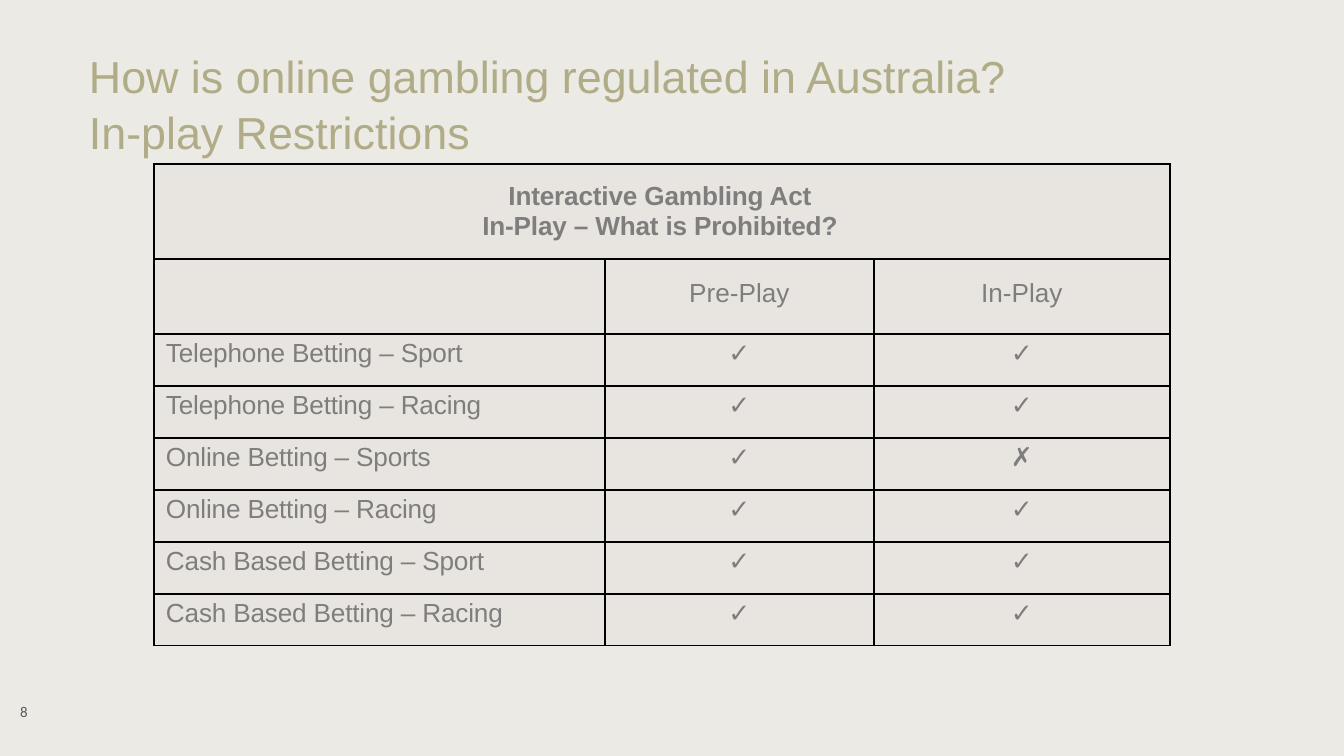
from lxml.etree import SubElement
from pptx import Presentation
from pptx.dml.color import RGBColor
from pptx.enum.text import MSO_ANCHOR, PP_ALIGN
from pptx.oxml.ns import qn
from pptx.util import Emu, Pt

EMU_PER_PX = 914400 / 134.4

BACKGROUND = RGBColor(0xEC, 0xEA, 0xE4)
CELL_FILL = RGBColor(0xE8, 0xE4, 0xDF)
TITLE_COLOR = RGBColor(0xB1, 0xAC, 0x88)
TABLE_TEXT = RGBColor(0x7E, 0x7E, 0x7E)
NUMBER_COLOR = RGBColor(0x59, 0x59, 0x59)
BORDER_COLOR = RGBColor(0x00, 0x00, 0x00)

TITLE_LINES = ["How is online gambling regulated in Australia?", "In-play Restrictions"]
HEADING_LINES = ["Interactive Gambling Act", "In-Play – What is Prohibited?"]
COLUMN_LABELS = ["", "Pre-Play", "In-Play"]
BETTING_ROWS = [
    ["Telephone Betting – Sport", "✓", "✓"],
    ["Telephone Betting – Racing", "✓", "✓"],
    ["Online Betting – Sports", "✓", "✗"],
    ["Online Betting – Racing", "✓", "✓"],
    ["Cash Based Betting – Sport", "✓", "✓"],
    ["Cash Based Betting – Racing", "✓", "✓"],
]
COLUMN_WIDTHS = [451, 269, 296]
ROW_HEIGHTS = [95, 75] + [52] * len(BETTING_ROWS)


def px(value):
    return Emu(round(value * EMU_PER_PX))


def set_margins(target, left=0, top=0, right=0, bottom=0):
    target.margin_left, target.margin_top = px(left), px(top)
    target.margin_right, target.margin_bottom = px(right), px(bottom)


def write_lines(text_frame, lines, size, color, font_name="Arial", bold=False,
                align=PP_ALIGN.LEFT, line_spacing=1.0, letter_spacing=0):
    for index, line in enumerate(lines):
        paragraph = text_frame.paragraphs[0] if index == 0 else text_frame.add_paragraph()
        paragraph.alignment = align
        paragraph.line_spacing = line_spacing
        run = paragraph.add_run()
        run.text = line
        run.font.name = font_name
        run.font.size = Pt(size)
        run.font.bold = bold
        run.font.color.rgb = color
        if letter_spacing:
            run.font._element.set("spc", str(letter_spacing))


def add_text_box(slide, left, top, width, height, margins):
    text_frame = slide.shapes.add_textbox(px(left), px(top), px(width), px(height)).text_frame
    text_frame.word_wrap = True
    set_margins(text_frame, *margins)
    return text_frame


def style_cell(cell):
    properties = cell._tc.get_or_add_tcPr()
    for side in ("lnL", "lnR", "lnT", "lnB"):
        line = SubElement(properties, qn(f"a:{side}"), w=str(Pt(1)))
        fill = SubElement(line, qn("a:solidFill"))
        SubElement(fill, qn("a:srgbClr"), val=str(BORDER_COLOR))
    cell.fill.solid()
    cell.fill.fore_color.rgb = CELL_FILL
    set_margins(cell)


def add_betting_table(slide):
    frame = slide.shapes.add_table(len(ROW_HEIGHTS), len(COLUMN_WIDTHS), px(154), px(164),
                                   px(sum(COLUMN_WIDTHS)), px(sum(ROW_HEIGHTS)))
    table = frame.table
    table.first_row = False
    table.horz_banding = False
    for column, width in zip(table.columns, COLUMN_WIDTHS):
        column.width = px(width)
    for row, height in zip(table.rows, ROW_HEIGHTS):
        row.height = px(height)
    for cell in table.iter_cells():
        style_cell(cell)

    heading = table.cell(0, 0)
    heading.merge(table.cell(0, len(COLUMN_WIDTHS) - 1))
    heading.vertical_anchor = MSO_ANCHOR.MIDDLE
    set_margins(heading, right=4)
    write_lines(heading.text_frame, HEADING_LINES, 14, TABLE_TEXT, bold=True,
                align=PP_ALIGN.CENTER, letter_spacing=-10)

    for row_index, texts in enumerate([COLUMN_LABELS] + BETTING_ROWS, start=1):
        top = 20 if row_index == 1 else 5
        for column_index, text in enumerate(texts):
            if not text:
                continue
            cell = table.cell(row_index, column_index)
            is_label = column_index == 0
            set_margins(cell, left=12 if is_label else 0, top=top)
            write_lines(cell.text_frame, [text], 14, TABLE_TEXT,
                        align=PP_ALIGN.LEFT if is_label else PP_ALIGN.CENTER,
                        letter_spacing=-10 if is_label else 0)


def main():
    presentation = Presentation()
    presentation.slide_width, presentation.slide_height = px(1344), px(756)
    slide = presentation.slides.add_slide(presentation.slide_layouts[6])
    slide.background.fill.solid()
    slide.background.fill.fore_color.rgb = BACKGROUND

    number = add_text_box(slide, 7, 696, 313, 40, (13, 7, 13, 7))
    write_lines(number, ["8"], 8, NUMBER_COLOR, font_name="Calibri")
    title = add_text_box(slide, 88, 46, 1028, 109, (1, 0, 0, 0))
    write_lines(title, TITLE_LINES, 24, TITLE_COLOR, line_spacing=1.05)
    add_betting_table(slide)

    presentation.save("out.pptx")


if __name__ == "__main__":
    main()
